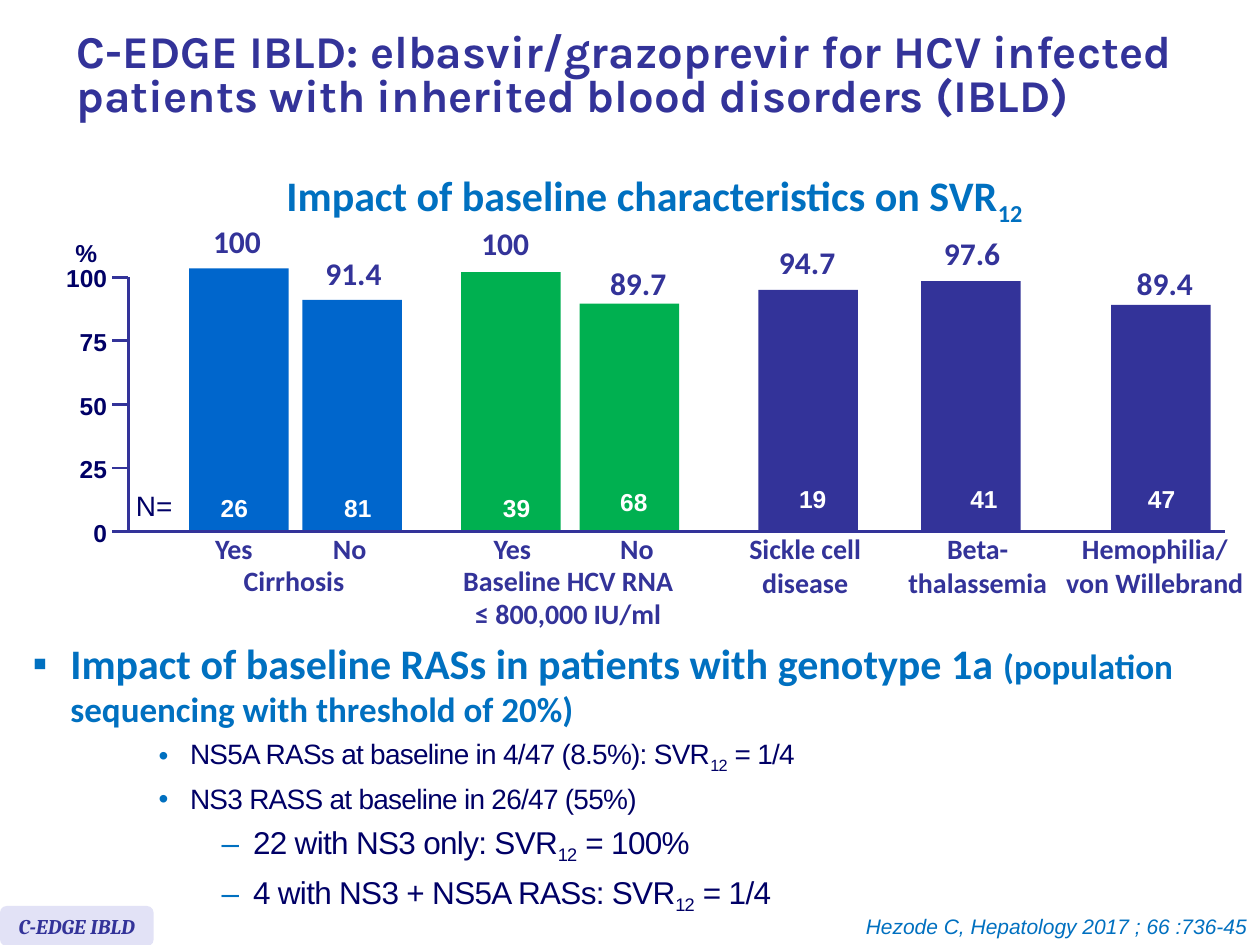
from lxml import etree
from pptx import Presentation
from pptx import util as u
from pptx.dml.color import RGBColor
from pptx.enum import shapes, text
from pptx.oxml import ns

Pt = u.Pt
INDIGO = RGBColor(0x33, 0x33, 0x99)
NAVY = RGBColor(0x00, 0x00, 0x66)
SKY = RGBColor(0x00, 0x70, 0xC0)
BLUE = RGBColor(0x00, 0x66, 0xCC)
GREEN = RGBColor(0x00, 0xB0, 0x50)
LILAC = RGBColor(0xE2, 0xE2, 0xF6)
WHITE = RGBColor(0xFF, 0xFF, 0xFF)
LEFT, CENTER, RIGHT = text.PP_ALIGN.LEFT, text.PP_ALIGN.CENTER, text.PP_ALIGN.RIGHT

# Text formats
TITLE = dict(name="Karla", size=Pt(26), bold=True, color=INDIGO)
HEADING = dict(name="Calibri", size=Pt(24), bold=True, color=SKY)
HEADING_SMALL = dict(HEADING, size=Pt(20))
VALUE = dict(name="Calibri", size=Pt(18), bold=True, color=INDIGO)
CATEGORY = dict(VALUE, size=Pt(16))
TICK = dict(name="Arial", size=Pt(14), bold=True, color=NAVY)
COUNT = dict(TICK, color=WHITE)
COUNT_KEY = dict(TICK, size=Pt(16), bold=False)
TAG = dict(name="Cambria", size=Pt(12), bold=True, italic=True, color=INDIGO)
CITATION = dict(name="Arial", size=Pt(12), italic=True, color=SKY)
POINT = dict(name="Arial", size=Pt(16), bold=False, color=NAVY, spc=-40)
SUBPOINT = dict(POINT, size=Pt(18))


def sub(fmt):
    return dict(fmt, baseline=-25000)


# Content
TITLE_TEXT = ("C-EDGE IBLD: elbasvir/grazoprevir for HCV infected "
              "patients with inherited blood disorders (IBLD)")
CHART_TITLE = [("Impact of baseline characteristics on SVR", HEADING), ("12", sub(HEADING))]

# Bar left, bar top, colour, (value, centre, top), (N, centre, top), (category lines, centre)
BARS = [
    (108, 153.4, BLUE, ("100", 135.4, 133.9), ("26", 133.9, 281.5), (["Yes"], 133.6)),
    (172.8, 171.4, BLUE, ("91.4", 202, 151.9), ("81", 204.5, 281.5), (["No"], 199.8)),
    (263.5, 155.5, GREEN, ("100", 288.7, 134.6), ("39", 295.2, 281.5), (["Yes"], 292.7)),
    (331.2, 173.5, GREEN, ("89.7", 364.7, 157.7), ("68", 362.2, 278.6), (["No"], 364)),
    (433.4, 165.6, INDIGO, ("94.7", 461.2, 145.4), ("19", 464.4, 276.5),
     (["Sickle cell", "disease"], 460.1)),
    (526.3, 160.6, INDIGO, ("97.6", 555.5, 140.4), ("41", 562.3, 276.5),
     (["Beta-", "thalassemia"], 558.7)),
    (635, 174.2, INDIGO, ("89.4", 665.6, 157.7), ("47", 663.8, 276.5),
     (["Hemophilia/", "von Willebrand"], 659.9)),
]
GROUPS = [(["Cirrhosis"], 168), (["Baseline HCV RNA", "≤ 800,000 IU/ml"], 324.7)]
TICKS = ["0", "25", "50", "75", "100"]

# Level, bullet, left margin, hanging indent, runs
POINTS = [
    (0, "▪", 21.6, 21.6, [
        ("Impact of baseline RASs in patients with genotype 1a ", HEADING),
        ("(population sequencing with threshold of 20%)", HEADING_SMALL)]),
    (2, "•", 90, 18, [
        ("NS5A RASs at baseline in 4/47 (8.5%): SVR", POINT), ("12", sub(POINT)),
        (" = 1/4", POINT)]),
    (2, "•", 90, 18, [("NS3 RASS at baseline in 26/47 (55%)", POINT)]),
    (3, "–", 126, 18, [
        ("22 with NS3 only: SVR", SUBPOINT), ("12", sub(SUBPOINT)), (" = 100%", SUBPOINT)]),
    (3, "–", 126, 18, [
        ("4 with NS3 + NS5A RASs: SVR", SUBPOINT), ("12", sub(SUBPOINT)),
        (" = 1/4", SUBPOINT)]),
]

# Chart geometry
BASE_Y, TICK_STEP = 303.8, 36.35
AXIS_X, AXIS_END, TICK_LENGTH = 73.4, 699.8, 9.3
BAR_W = 56.9

prs = Presentation()
prs.slide_width, prs.slide_height = Pt(720), Pt(540)
s = prs.slides.add_slide(prs.slide_layouts[6])


def add_runs(p, runs):
    for content, fmt in runs:
        r = p.add_run()
        r.text = content
        for key, value in fmt.items():
            if key == "color":
                r.font.color.rgb = value
            elif key in ("spc", "baseline"):
                r._r.get_or_add_rPr().set(key, str(value))
            else:
                setattr(r.font, key, value)


def add_text(x, y, w, h, paragraphs, align=LEFT, wrap=True, grow=False, inset=True,
             spacing=None):
    tf = s.shapes.add_textbox(Pt(x), Pt(y), Pt(w), Pt(h)).text_frame
    tf.word_wrap = wrap
    if grow:
        tf.auto_size = text.MSO_AUTO_SIZE.SHAPE_TO_FIT_TEXT
    if not inset:
        tf.margin_left = tf.margin_right = tf.margin_top = tf.margin_bottom = 0
    for i, runs in enumerate(paragraphs):
        p = tf.paragraphs[0] if i == 0 else tf.add_paragraph()
        p.alignment = align
        if spacing:
            p.line_spacing = Pt(spacing)
        add_runs(p, runs)
    return tf


def add_label(lines, center, y, w, h, fmt, spacing=None):
    add_text(center - w / 2, y, w, h, [[(line, fmt)] for line in lines], CENTER,
             wrap=False, grow=True, inset=False, spacing=spacing)


def add_category(lines, center, y):
    w = 7.5 * max(map(len, lines)) + 10
    add_label(lines, center, y, w, 17.7 * len(lines), CATEGORY)


def add_box(kind, x, y, w, h, color):
    sp = s.shapes.add_shape(kind, Pt(x), Pt(y), Pt(w), Pt(h))
    sp.shadow.inherit = False
    sp.fill.solid()
    sp.fill.fore_color.rgb = color
    sp.line.fill.background()
    return sp


def add_line(x1, y1, x2, y2):
    c = s.shapes.add_connector(shapes.MSO_CONNECTOR.STRAIGHT, Pt(x1), Pt(y1), Pt(x2), Pt(y2))
    c.line.color.rgb = INDIGO
    c.line.width = Pt(1.5)
    etree.SubElement(c._element.spPr, ns.qn("a:effectLst"))


# Titles
tf = add_text(36.7, 5.8, 657.4, 77, [[(TITLE_TEXT, TITLE)]], spacing=25)
tf.vertical_anchor = text.MSO_ANCHOR.MIDDLE
add_text(26.6, 93.6, 694.8, 38.9, [CHART_TITLE], CENTER)

# Bars with values, patient counts and categories
for x, top, color, value, count, category in BARS:
    add_box(shapes.MSO_SHAPE.RECTANGLE, x, top, BAR_W, BASE_Y - top, color)
    add_label([value[0]], value[1], value[2], 32.4, 15.8, VALUE, spacing=14.8)
    add_label([count[0]], count[1], count[2], 15.8, 17.3, COUNT)
    add_category(*category, BASE_Y)
for group in GROUPS:
    add_category(*group, 321.8)

# Axes
for i, label in enumerate(TICKS):
    y = BASE_Y - i * TICK_STEP
    add_line(AXIS_X - TICK_LENGTH, y, AXIS_X, y)
    w = 7.8 * len(label)
    add_text(61.2 - w, y - 7.9, w, 14.4, [[(label, TICK)]], RIGHT,
             wrap=False, grow=True, inset=False)
add_line(AXIS_X, BASE_Y - 4 * TICK_STEP, AXIS_X, BASE_Y)
add_line(AXIS_X, BASE_Y, AXIS_END, BASE_Y)
add_text(36, 132.5, 27.4, 20.2, [[("%", TICK)]], wrap=False, grow=True)
add_text(70.6, 275.8, 44.6, 22.3, [[("N=", COUNT_KEY)]], grow=True)

# Bullet points
tf = add_text(11.5, 360.7, 694.8, 158.4, [point[-1] for point in POINTS])
for i, (p, (level, bullet, margin, hang, _)) in enumerate(zip(tf.paragraphs, POINTS)):
    p.level = level
    if i:
        p.space_before = Pt(4)
    pPr = p._p.get_or_add_pPr()
    pPr.set("marL", str(Pt(margin)))
    pPr.set("indent", str(-Pt(hang)))
    bu_color = etree.SubElement(pPr, ns.qn("a:buClr"))
    etree.SubElement(bu_color, ns.qn("a:srgbClr")).set("val", str(SKY))
    etree.SubElement(pPr, ns.qn("a:buFont")).set("typeface", "Arial")
    etree.SubElement(pPr, ns.qn("a:buChar")).set("char", bullet)

# Study tag and citation
tag = add_box(shapes.MSO_SHAPE.ROUNDED_RECTANGLE, 0, 517.7, 87.8, 23, LILAC)
tag.text_frame.word_wrap = False
tag.text_frame.vertical_anchor = text.MSO_ANCHOR.MIDDLE
p = tag.text_frame.paragraphs[0]
p.alignment = CENTER
add_runs(p, [("C-EDGE IBLD", TAG)])
add_text(486, 518.4, 234, 21.6, [[("Hezode C, Hepatology 2017 ; 66 :736-45", CITATION)]],
         RIGHT, wrap=False, grow=True)

prs.save("out.pptx")
